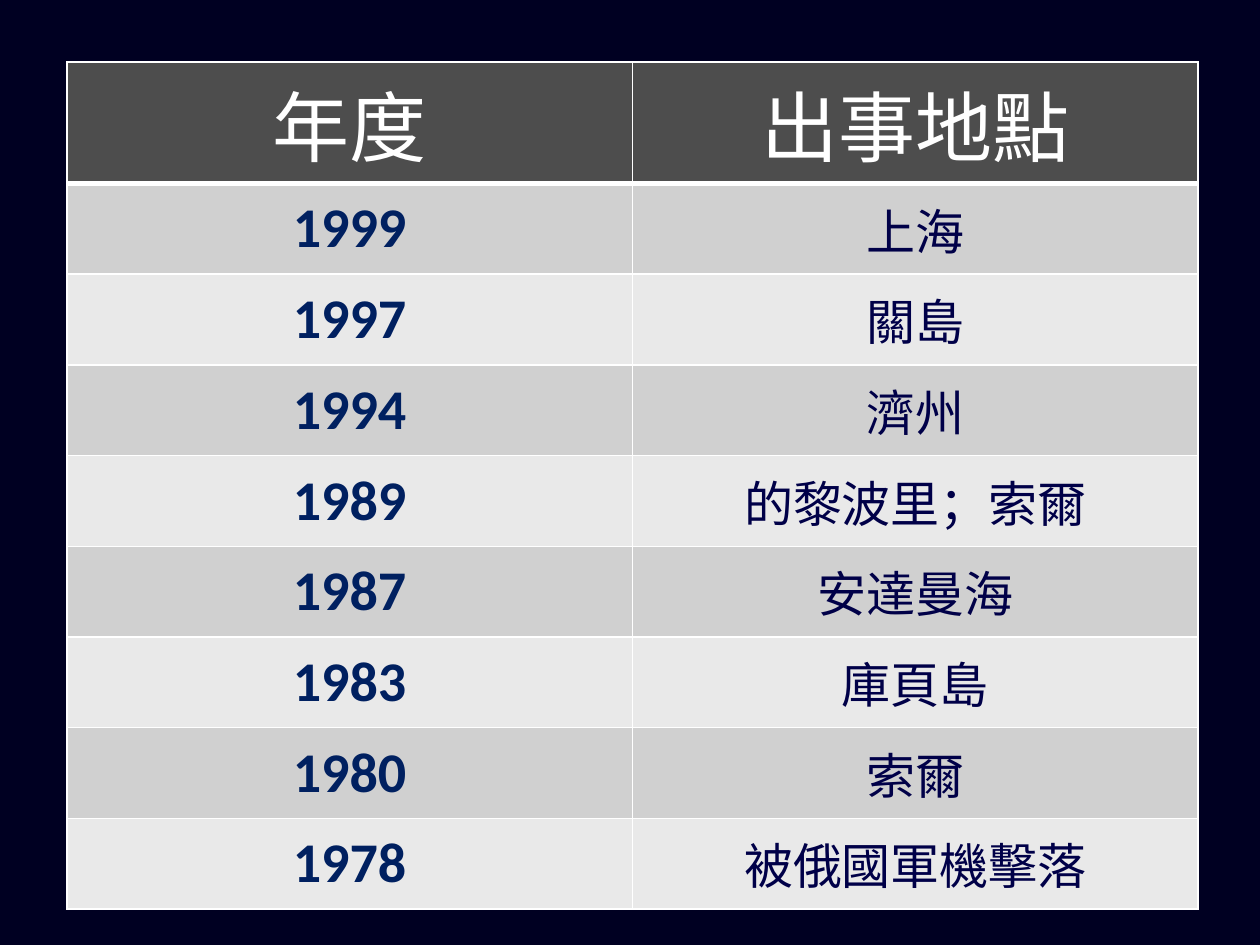
from dataclasses import dataclass

from lxml.etree import SubElement
from pptx import Presentation
from pptx.dml.color import RGBColor
from pptx.enum.text import MSO_ANCHOR, PP_ALIGN
from pptx.oxml.ns import qn
from pptx.table import _Cell as Cell
from pptx.util import Inches, Pt

COLORS = {
    "background": "000022",
    "header": "4D4D4D",
    "odd_row": "D0D0D0",
    "even_row": "E9E9E9",
    "white": "FFFFFF",
    "year": "002060",
    "place": "000048",
}


@dataclass(frozen=True)
class TextStyle:
    font: str
    size: int
    color: str
    bold: bool = False


@dataclass(frozen=True)
class Accident:
    year: str
    place: str


HEADER_STYLE = TextStyle("Arial", 44, "white")
YEAR_STYLE = TextStyle("Calibri", 32, "year", bold=True)
PLACE_STYLE = TextStyle("Lato", 28, "place")

HEADINGS = ("年度", "出事地點")
ACCIDENTS = (
    Accident("1999", "上海"),
    Accident("1997", "關島"),
    Accident("1994", "濟州"),
    Accident("1989", "的黎波里；索爾"),
    Accident("1987", "安達曼海"),
    Accident("1983", "庫頁島"),
    Accident("1980", "索爾"),
    Accident("1978", "被俄國軍機擊落"),
)

COLUMN_WIDTH = 4.49
HEADER_HEIGHT = 0.87
ROW_HEIGHT = 0.72


def rgb(name: str) -> RGBColor:
    return RGBColor.from_string(COLORS[name])


def add_borders(cell: Cell, top: float, bottom: float) -> None:
    """Draw white borders, 1 pt at the sides; call before filling the cell."""
    properties = cell._tc.get_or_add_tcPr()
    for side, width in (("L", 1), ("R", 1), ("T", top), ("B", bottom)):
        line = SubElement(properties, qn(f"a:ln{side}"), w=str(Pt(width)))
        fill = SubElement(line, qn("a:solidFill"))
        SubElement(fill, qn("a:srgbClr"), val=COLORS["white"])


def write_cell(cell: Cell, text: str, style: TextStyle) -> None:
    cell.vertical_anchor = MSO_ANCHOR.MIDDLE
    cell.margin_left = cell.margin_right = Inches(0.07)
    cell.margin_top = cell.margin_bottom = Inches(0.04)
    paragraph = cell.text_frame.paragraphs[0]
    paragraph.text = text
    paragraph.alignment = PP_ALIGN.CENTER
    font = paragraph.runs[0].font
    font.name = style.font
    font.size = Pt(style.size)
    font.bold = style.bold
    font.color.rgb = rgb(style.color)


def main() -> None:
    prs = Presentation()
    prs.slide_width, prs.slide_height = Inches(10), Inches(7.5)
    slide = prs.slides.add_slide(prs.slide_layouts[6])
    slide.background.fill.solid()
    slide.background.fill.fore_color.rgb = rgb("background")

    rows = [HEADINGS] + [(a.year, a.place) for a in ACCIDENTS]
    table = slide.shapes.add_table(
        len(rows), len(HEADINGS), Inches(0.53), Inches(0.49),
        Inches(COLUMN_WIDTH * len(HEADINGS)),
        Inches(HEADER_HEIGHT + ROW_HEIGHT * len(ACCIDENTS)),
    ).table
    for column in table.columns:
        column.width = Inches(COLUMN_WIDTH)

    for r, texts in enumerate(rows):
        is_header = r == 0
        table.rows[r].height = Inches(HEADER_HEIGHT if is_header else ROW_HEIGHT)
        band = "header" if is_header else "odd_row" if r % 2 else "even_row"
        styles = (HEADER_STYLE,) * 2 if is_header else (YEAR_STYLE, PLACE_STYLE)
        for c, (text, style) in enumerate(zip(texts, styles)):
            cell = table.cell(r, c)
            add_borders(cell, top=3 if r == 1 else 1, bottom=3 if is_header else 1)
            cell.fill.solid()
            cell.fill.fore_color.rgb = rgb(band)
            write_cell(cell, text, style)

    prs.save("out.pptx")


if __name__ == "__main__":
    main()
